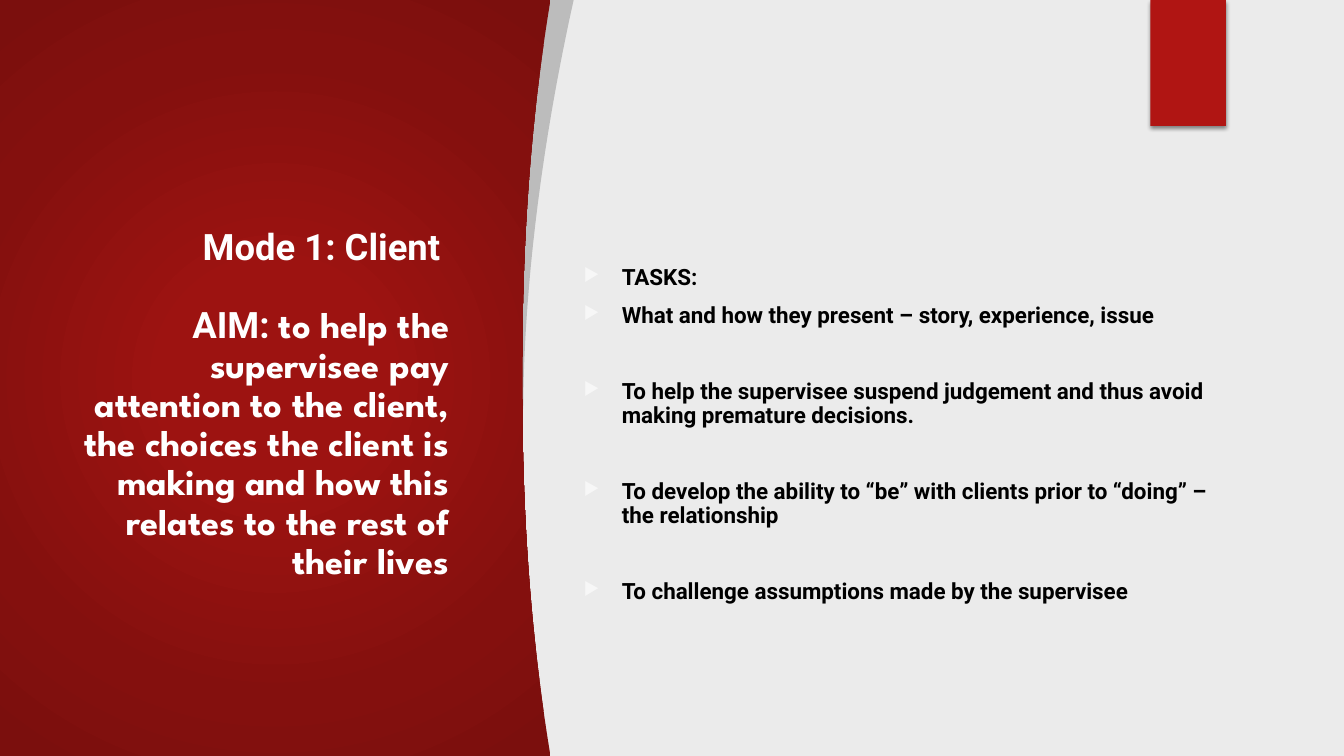
from lxml.etree import SubElement
from pptx import Presentation
from pptx.dml.color import RGBColor
from pptx.enum.shapes import MSO_SHAPE
from pptx.enum.text import MSO_ANCHOR, PP_ALIGN
from pptx.oxml import parse_xml
from pptx.oxml.ns import nsdecls, qn
from pptx.util import Inches, Pt

WIDTH, HEIGHT = 13.33, 7.5
TEXT_TOP, TEXT_HEIGHT = 0.24 * HEIGHT, 4.89
CURVE_STEPS = 40
COLORS = {
    "background": "EBEBEB", "tab": "B01513", "black": "000000",
    "title": "FFFFFF", "bullet": "F7F7F7",
}
PANEL_GRADIENT = [(0, "9D1311"), (23, "9D1311"), (69, "84100E"), (97, "7B0F0D")]
AIM = ("to help the supervisee pay attention to the client, the choices the "
       "client is making and how this relates to the rest of their lives")
# Each task with its space before, in points
TASKS = [
    ("TASKS:", 0),
    ("What and how they present – story, experience, issue", 10),
    ("To help the supervisee suspend judgement and thus avoid making premature decisions.", 37),
    ("To develop the ability to “be” with clients prior to “doing” – the relationship", 37),
    ("To challenge assumptions made by the supervisee", 37),
]


def rgb(name):
    return RGBColor.from_string(COLORS[name])


def curve(bottom, edge):
    heights = [bottom * step / CURVE_STEPS for step in range(CURVE_STEPS + 1)]
    return [(edge(y), y) for y in heights]


def panel_edge(y):
    middle = HEIGHT / 2
    return 5.18 + 0.28 * (abs(y - middle) / middle) ** 2.2


def crescent_edge(y):
    return 5.19 + 0.5 * (1 - y / 4.06) ** 1.8


def add_outline(slide, points):
    corners = [(Inches(x), Inches(y)) for x, y in points]
    builder = slide.shapes.build_freeform(*corners[0])
    builder.add_line_segments(corners[1:], close=True)
    shape = builder.convert_to_shape()
    shape.shadow.inherit = False
    shape.line.fill.background()
    return shape


def add_crescent(slide):
    shape = add_outline(slide, curve(4.06, crescent_edge) + [(5.12, 4.02), (5.17, 0)])
    shape.fill.solid()
    shape.fill.fore_color.rgb = rgb("black")
    color = shape.element.spPr.find(".//" + qn("a:srgbClr"))
    SubElement(color, qn("a:alpha"), val="20000")


def add_panel(slide):
    shape = add_outline(slide, [(0, 0)] + curve(HEIGHT, panel_edge) + [(0, HEIGHT)])
    stops = "".join(
        f'<a:gs pos="{position * 1000}"><a:srgbClr val="{color}"/></a:gs>'
        for position, color in PANEL_GRADIENT)
    gradient = parse_xml(
        f'<a:gradFill {nsdecls("a")} rotWithShape="1"><a:gsLst>{stops}</a:gsLst>'
        '<a:path path="circle">'
        '<a:fillToRect l="50000" t="50000" r="50000" b="50000"/></a:path></a:gradFill>')
    shape.element.spPr.find(qn("a:custGeom")).addnext(gradient)


def add_tab(slide):
    shape = slide.shapes.add_shape(
        MSO_SHAPE.RECTANGLE, Inches(11.41), 0, Inches(0.75), Inches(HEIGHT / 6))
    shape.fill.solid()
    shape.fill.fore_color.rgb = rgb("tab")
    shape.line.fill.background()
    shape.shadow.inherit = False
    effects = shape.element.spPr.find(qn("a:effectLst"))
    shadow = SubElement(effects, qn("a:outerShdw"), blurRad=str(Pt(3)), dist=str(Pt(2)),
                        dir="5400000", rotWithShape="0")
    color = SubElement(shadow, qn("a:srgbClr"), val=COLORS["black"])
    SubElement(color, qn("a:alpha"), val="45000")


def place_text(shape, left, width, top_inset):
    shape.left, shape.width = Inches(left), Inches(width)
    shape.top, shape.height = Inches(TEXT_TOP), Inches(TEXT_HEIGHT)
    frame = shape.text_frame
    frame.word_wrap = True
    frame.vertical_anchor = MSO_ANCHOR.TOP
    frame.margin_top = Inches(top_inset)


def format_run(run, size, color, font="Roboto"):
    run.font.name, run.font.size, run.font.bold = font, Pt(size), True
    run.font.color.rgb = rgb(color)


def format_paragraph(paragraph, space_before):
    paragraph.line_spacing = 0.9
    paragraph.space_before = Pt(space_before)


def add_bullet(paragraph):
    properties = paragraph._p.get_or_add_pPr()
    properties.set("marL", str(Inches(0.38)))
    properties.set("indent", str(-Inches(0.38)))
    color = SubElement(properties, qn("a:buClr"))
    SubElement(color, qn("a:srgbClr"), val=COLORS["bullet"])
    SubElement(properties, qn("a:buSzPct"), val="80000")
    SubElement(properties, qn("a:buChar"), char="▶")


def fill_title(slide):
    title = slide.shapes.title
    slide.shapes.element.append(title.element)  # bring in front of the panel
    place_text(title, 0.71, 3.85, 0.47)
    title.text_frame.text = "Mode 1: Client \nAIM: "
    heading, aim = title.text_frame.paragraphs
    aim.add_run().text = AIM
    for paragraph, space_before in ((heading, 0), (aim, 28)):
        format_paragraph(paragraph, space_before)
        paragraph.alignment = PP_ALIGN.RIGHT
        for run in paragraph.runs:
            format_run(run, 26, "title")
    aim.runs[-1].font.name = "League Spartan"


def add_tasks(slide):
    box = slide.shapes.add_textbox(0, 0, 0, 0)
    place_text(box, 5.69, 6.47, 0.84)
    box.text_frame.text = "\n".join(text for text, _ in TASKS)
    for paragraph, (_, space_before) in zip(box.text_frame.paragraphs, TASKS):
        add_bullet(paragraph)
        format_paragraph(paragraph, space_before)
        format_run(paragraph.runs[0], 16, "black")


def main():
    presentation = Presentation()
    presentation.slide_width, presentation.slide_height = Inches(WIDTH), Inches(HEIGHT)
    slide = presentation.slides.add_slide(presentation.slide_layouts[5])
    slide.background.fill.solid()
    slide.background.fill.fore_color.rgb = rgb("background")
    add_crescent(slide)
    add_panel(slide)
    add_tab(slide)
    fill_title(slide)
    add_tasks(slide)
    presentation.save("out.pptx")


if __name__ == "__main__":
    main()
